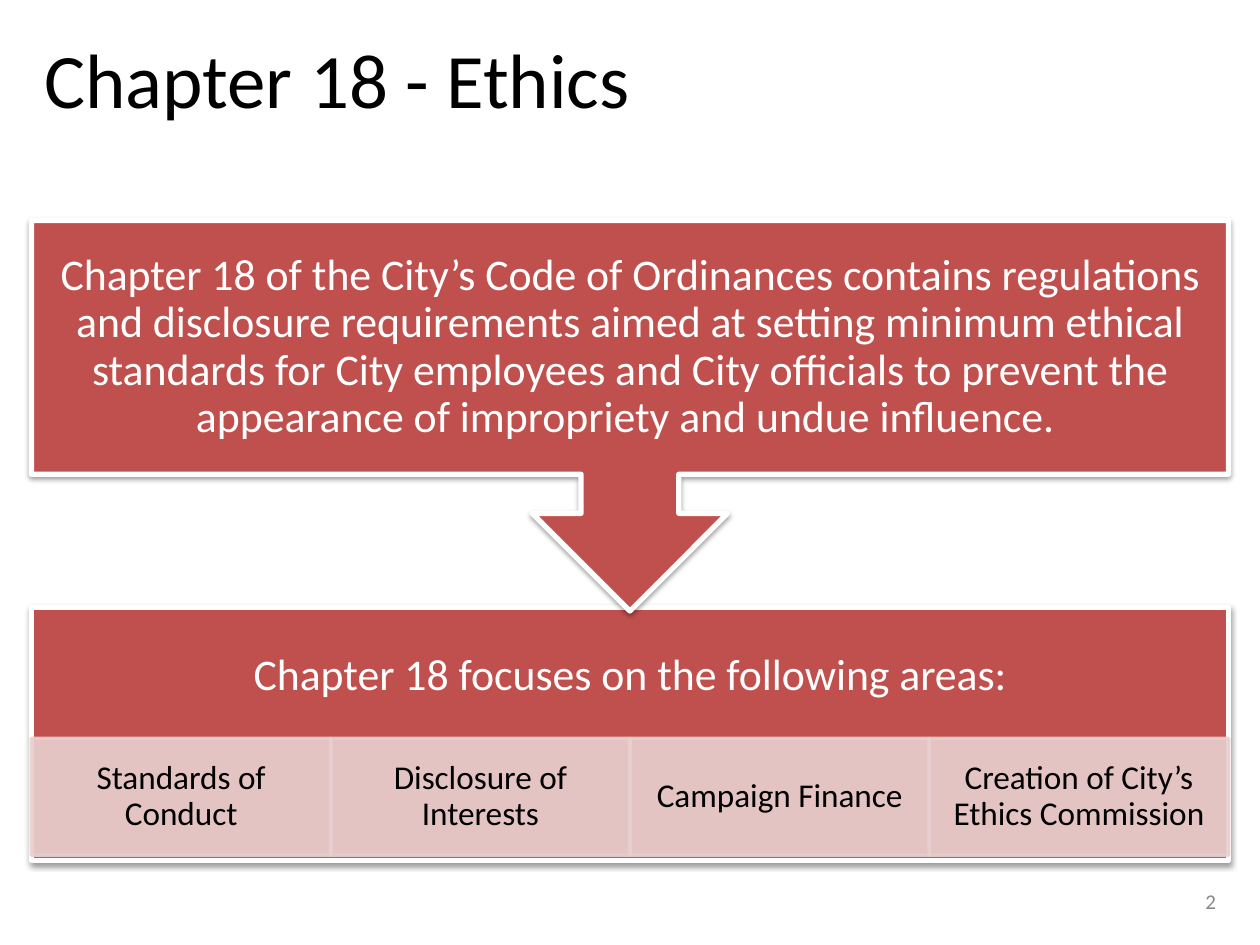
from dataclasses import dataclass

from lxml.etree import SubElement
from pptx import Presentation
from pptx.dml.color import RGBColor
from pptx.enum.shapes import MSO_SHAPE as Shape
from pptx.enum.text import MSO_ANCHOR as Anchor, PP_ALIGN as Align
from pptx.oxml.ns import qn
from pptx.util import Inches, Pt


@dataclass(frozen=True)
class Theme:
    font: str = "Calibri"
    black: str = "000000"
    white: str = "FFFFFF"
    gray: str = "898989"
    red: str = "C0504D"
    pink: str = "E8D0D0"
    title_size: int = 44
    panel_size: int = 25
    area_size: int = 19
    number_size: int = 12


THEME = Theme()
LEFT, WIDTH = 0.25, 9.5
AREAS = [
    "Standards of Conduct",
    "Disclosure of Interests",
    "Campaign Finance",
    "Creation of City’s Ethics Commission",
]


def write_text(shape, text, size, color, align, margins=(0.1, 0.05, 0.1, 0.05),
               line_spacing=None):
    frame = shape.text_frame
    frame.word_wrap = True
    frame.vertical_anchor = Anchor.MIDDLE
    (frame.margin_left, frame.margin_top,
     frame.margin_right, frame.margin_bottom) = map(Inches, margins)
    paragraph = frame.paragraphs[0]
    paragraph.alignment = align
    if line_spacing:
        paragraph.line_spacing = line_spacing
    run = paragraph.add_run()
    run.text = text
    run.font.name = THEME.font
    run.font.size = Pt(size)
    run.font.color.rgb = RGBColor.from_string(color)


def add_block(slide, kind, box, fill, line, line_width):
    shape = slide.shapes.add_shape(kind, *map(Inches, box))
    shape.fill.solid()
    shape.fill.fore_color.rgb = RGBColor.from_string(fill)
    shape.line.color.rgb = RGBColor.from_string(line)
    shape.line.width = Pt(line_width)
    shape.shadow.inherit = False
    return shape


def add_panel(slide, kind, top, height, text, bottom_margin=0.19):
    """Red panel with a white outline and a soft shadow below."""
    panel = add_block(slide, kind, (LEFT, top, WIDTH, height),
                      THEME.red, THEME.white, 3)
    effects = panel._element.spPr.find(qn("a:effectLst"))
    shadow = SubElement(effects, qn("a:outerShdw"), blurRad=str(Pt(3.1)),
                        dist=str(Pt(1.6)), dir="5400000", rotWithShape="0")
    color = SubElement(shadow, qn("a:srgbClr"), val=THEME.black)
    SubElement(color, qn("a:alpha"), val="38000")
    write_text(panel, text, THEME.panel_size, THEME.white, Align.CENTER,
               (0.19, 0.19, 0.19, bottom_margin), 0.9)


def add_area(slide, index, text):
    """One translucent cell in the row of focus areas."""
    width = WIDTH / len(AREAS)
    area = add_block(slide, Shape.RECTANGLE,
                     (LEFT + index * width, 5.86, width, 0.93),
                     THEME.pink, THEME.pink, 2)
    for color in area._element.spPr.iter(qn("a:srgbClr")):
        SubElement(color, qn("a:alpha"), val="90000")
    write_text(area, text, THEME.area_size, THEME.black, Align.CENTER,
               (0.15, 0.03, 0.15, 0.03), 0.9)


def add_title(slide, text):
    title = slide.shapes.title
    title.left, title.top = Inches(LEFT), Inches(0.08)
    title.width, title.height = Inches(WIDTH), Inches(1.08)
    write_text(title, text, THEME.title_size, THEME.black, Align.LEFT)


def add_page_number(slide, number):
    box = slide.shapes.add_textbox(*map(Inches, (7.42, 6.95, 2.33, 0.4)))
    write_text(box, number, THEME.number_size, THEME.gray, Align.RIGHT)


def main():
    presentation = Presentation()
    presentation.slide_width = Inches(10)
    presentation.slide_height = Inches(7.5)
    slide = presentation.slides.add_slide(presentation.slide_layouts[5])

    add_title(slide, "Chapter 18 - Ethics")
    add_page_number(slide, "2")

    # Focus areas; the bottom margin keeps the heading above the cells
    add_panel(slide, Shape.RECTANGLE, 4.82, 2.01,
              "Chapter 18 focuses on the following areas:", bottom_margin=1.11)
    for index, text in enumerate(AREAS):
        add_area(slide, index, text)

    # Purpose, pointing down to the focus areas
    add_panel(slide, Shape.DOWN_ARROW_CALLOUT, 1.75, 3.1,
              "Chapter 18 of the City’s Code of Ordinances contains regulations "
              "and disclosure requirements aimed at setting minimum ethical "
              "standards for City employees and City officials to prevent the "
              "appearance of impropriety and undue influence. ")

    presentation.save("out.pptx")


if __name__ == "__main__":
    main()
